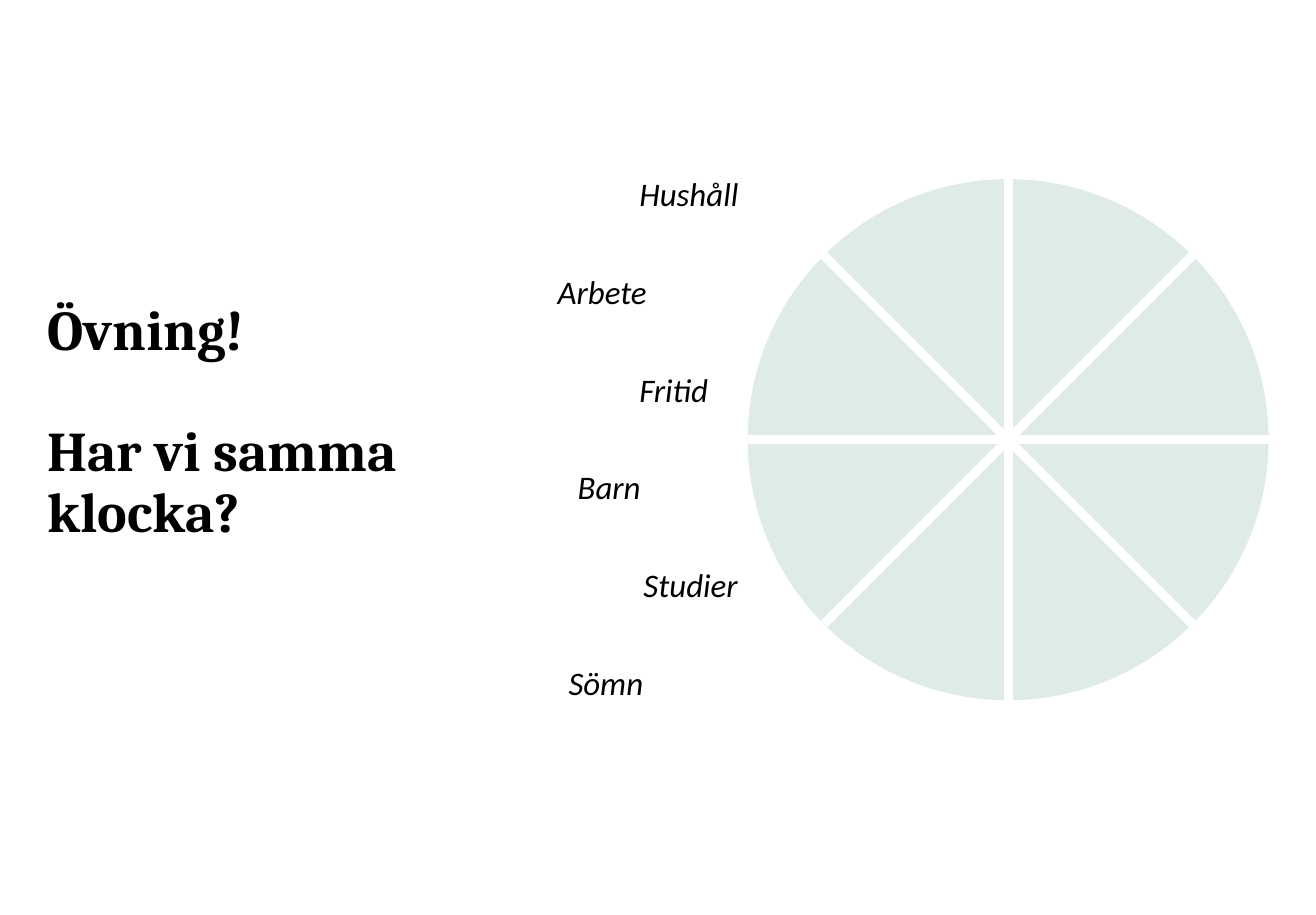
from math import cos, radians, sin

from pptx import Presentation
from pptx.dml.color import RGBColor
from pptx.enum.shapes import MSO_CONNECTOR as Line, MSO_SHAPE as Shape
from pptx.enum.text import MSO_ANCHOR as Anchor, MSO_AUTO_SIZE as Fit, PP_ALIGN as Align
from pptx.oxml.ns import qn
from pptx.util import Pt
from lxml.etree import SubElement

BLACK = RGBColor(0x00, 0x00, 0x00)
WHITE = RGBColor(0xFF, 0xFF, 0xFF)
MINT = RGBColor(0xDE, 0xEB, 0xE9)

prs = Presentation()
prs.slide_width, prs.slide_height = Pt(720), Pt(500.4)
slide = prs.slides.add_slide(prs.slide_layouts[5])
shapes = slide.shapes

# Title
title = shapes.title
title.left, title.top, title.width, title.height = Pt(25.9), Pt(165.6), Pt(240.5), Pt(131.8)
frame = title.text_frame
frame.text = "Övning!\nHar vi samma klocka?"
frame.word_wrap = True
frame.auto_size = Fit.NONE
frame.vertical_anchor = Anchor.MIDDLE
frame.margin_left = frame.margin_right = frame.margin_top = frame.margin_bottom = 0
for para in frame.paragraphs:
    para.alignment = Align.LEFT
    para.line_spacing = 0.9
    para.space_before = Pt(0)
    font = para.runs[0].font
    font.name, font.size, font.bold = "Cambria", Pt(30.6), True
    font.color.rgb = BLACK
frame.paragraphs[1].space_before = Pt(33)

# Clock face, cut into eight slices
mid_x, mid_y, radius = 551.6, 240.5, 142.5
face = shapes.add_shape(Shape.OVAL, Pt(mid_x - radius), Pt(mid_y - radius),
                        Pt(2 * radius), Pt(2 * radius))
face.shadow.inherit = False
face.fill.solid()
face.fill.fore_color.rgb = MINT
face.line.fill.background()

for angle in range(0, 180, 45):
    dx = radius * cos(radians(angle))
    dy = radius * sin(radians(angle))
    cut = shapes.add_connector(Line.STRAIGHT, Pt(mid_x - dx), Pt(mid_y - dy),
                               Pt(mid_x + dx), Pt(mid_y + dy))
    cut.line.color.rgb = WHITE
    cut.line.width = Pt(5)
    SubElement(cut.element.spPr, qn("a:effectLst"))

# Activities: text, left, width
labels = [
    ("Hushåll", 342.7, 69),
    ("Arbete", 298, 65),
    ("Fritid", 342.7, 52.6),
    ("Barn", 309, 49),
    ("Studier", 345, 66),
    ("Sömn", 304, 56),
]
for row, (text, left, width) in enumerate(labels):
    box = shapes.add_textbox(Pt(left), Pt(91.4 + 53.5 * row), Pt(width), Pt(29))
    frame = box.text_frame
    frame.text = text
    frame.word_wrap = False
    frame.auto_size = Fit.SHAPE_TO_FIT_TEXT
    font = frame.paragraphs[0].runs[0].font
    font.name, font.size, font.italic = "Calibri", Pt(18), True
    font.color.rgb = BLACK

prs.save("out.pptx")
